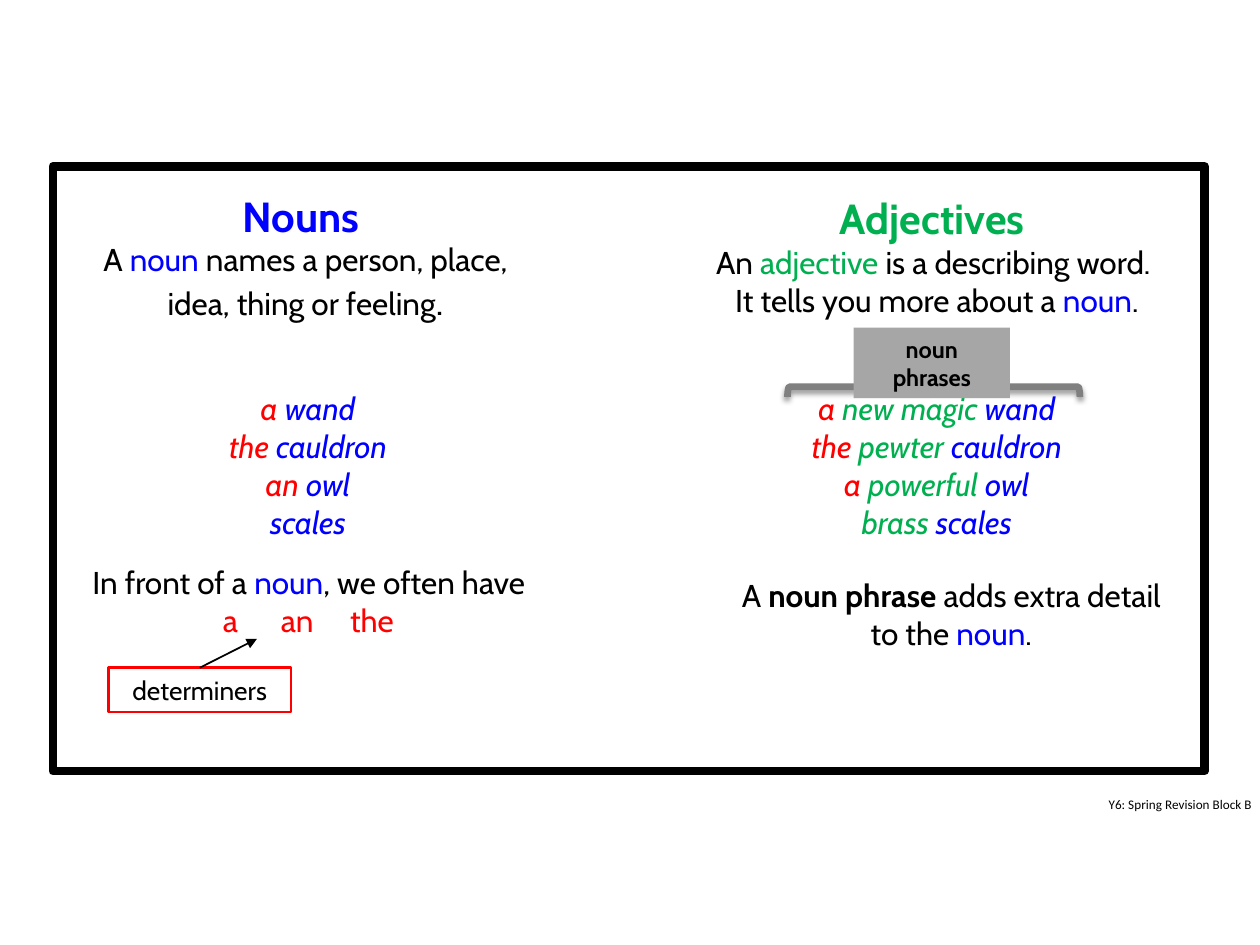
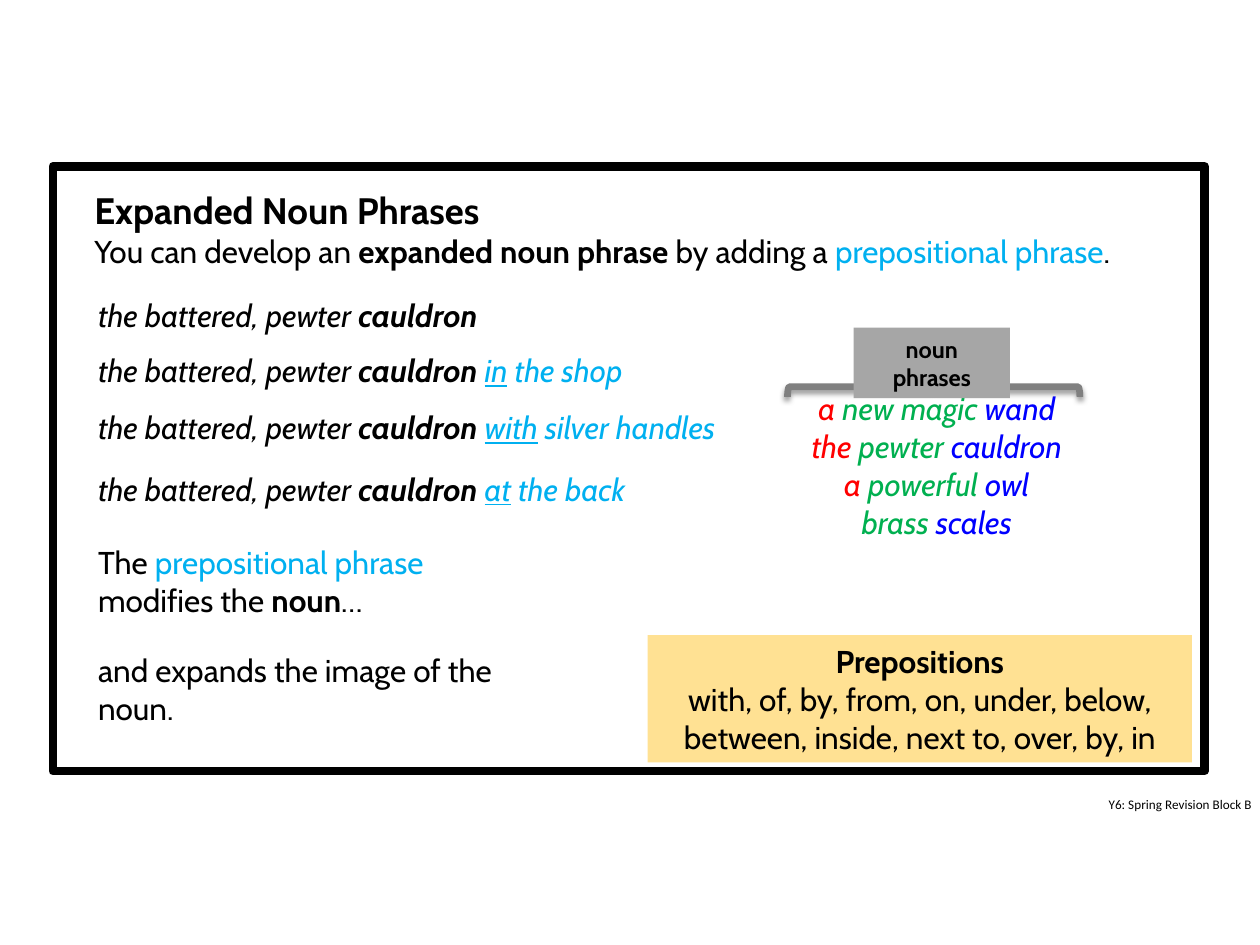
from lxml.etree import SubElement
from pptx import Presentation
from pptx.dml.color import RGBColor
from pptx.enum.shapes import MSO_CONNECTOR, MSO_SHAPE
from pptx.enum.text import MSO_ANCHOR, PP_ALIGN
from pptx.oxml.ns import qn
from pptx.util import Inches, Pt

COLOURS = {
    "black": "000000", "noun": "0000FF", "adjective": "00B050",
    "determiner": "FF0000", "preposition": "00B0F0", "white": "FFFFFF",
    "brace": "808080", "label": "A6A6A6", "panel": "FFE193",
}
CENTER, LEFT = PP_ALIGN.CENTER, PP_ALIGN.LEFT

deck = Presentation()
deck.slide_width, deck.slide_height = Inches(10), Inches(7.5)
# The grid has 100 columns and 75 rows
COLUMN = deck.slide_width / 100
ROW = deck.slide_height / 75


def add_box(page, place, fill=None, line=None, line_width=0, kind=MSO_SHAPE.RECTANGLE):
    """Add a preset shape at (column, row, columns, rows)."""
    left, top, width, height = place
    box = page.shapes.add_shape(kind, int(left * COLUMN), int(top * ROW),
                                int(width * COLUMN), int(height * ROW))
    box.shadow.inherit = False
    if fill:
        box.fill.solid()
        box.fill.fore_color.rgb = RGBColor.from_string(COLOURS[fill])
    else:
        box.fill.background()
    if line:
        box.line.color.rgb = RGBColor.from_string(COLOURS[line])
        box.line.width = Pt(line_width)
    else:
        box.line.fill.background()
    return box


def add_text(page, place, paragraphs, align=CENTER, box=None, wrap=True, font="Cabin"):
    """Write paragraphs of (size, spans); a span is (text, colour, flags b, i, u)."""
    if box is None:
        left, top, width, height = place
        box = page.shapes.add_textbox(int(left * COLUMN), int(top * ROW),
                                      int(width * COLUMN), int(height * ROW))
    else:
        box.text_frame.vertical_anchor = MSO_ANCHOR.MIDDLE
    frame = box.text_frame
    frame.word_wrap = wrap
    for index, (size, spans) in enumerate(paragraphs):
        para = frame.add_paragraph() if index else frame.paragraphs[0]
        para.alignment = align
        for text, colour, flags in spans:
            span = para.add_run()
            span.text = text
            span.font.name, span.font.size = font, Pt(size)
            span.font.color.rgb = RGBColor.from_string(COLOURS[colour])
            span.font.bold, span.font.italic = "b" in flags, "i" in flags
            span.font.underline = "u" in flags
    return box


# Frame, footer and noun phrase examples on both pages
example_phrases = [
    ("a ", "new magic ", "wand"),
    ("the ", "pewter ", "cauldron"),
    ("a ", "powerful ", "owl"),
    ("", "brass ", "scales"),
]
word_classes = ("determiner", "adjective", "noun")
pages = [deck.slides.add_slide(deck.slide_layouts[6]) for _ in range(2)]
for page in pages:
    add_box(page, (4.2, 13.2, 91.4, 48), line="black", line_width=5)
    add_text(page, (87, 62.7, 13.5, 2.3),
             [(7.5, [("Y6: Spring Revision Block B", "black", "")])],
             LEFT, wrap=False, font="Calibri")
    add_text(page, (59.5, 30.4, 29.7, 13.1), [
        (18, [(word, name, "i") for word, name in zip(phrase, word_classes) if word])
        for phrase in example_phrases])

    brace = add_box(page, (73.3, 19.1, 1.6, 23.2), line="brace", line_width=3.82,
                    kind=MSO_SHAPE.LEFT_BRACE)
    brace.rotation = 90
    effects = brace._element.spPr.find(qn("a:effectLst"))
    shadow = SubElement(effects, qn("a:outerShdw"), blurRad=str(Pt(3.1)),
                        dist=str(Pt(2)), dir="5400000", rotWithShape="0")
    shade = SubElement(shadow, qn("a:srgbClr"), val=COLOURS["black"])
    SubElement(shade, qn("a:alpha"), val="38000")

    label = add_box(page, (67.75, 26, 12.4, 5.6), fill="label")
    add_text(page, None, [(13.5, [("noun phrases", "black", "b")])], box=label)

# Page 1: nouns on the left, adjectives on the right
nouns_page, expanded_page = pages
nouns = add_text(nouns_page, (6.1, 14.6, 36.3, 12.6), [
    (24, [("Nouns ", "noun", "b")]),
    (18, [("A ", "black", ""), ("noun", "noun", ""),
          (" names a person, place, idea, thing or feeling", "black", ""),
          (".", "black", "")]),
])
nouns.text_frame.paragraphs[1].runs[-1].font.size = Pt(21)

noun_examples = [("a ", "wand"), ("the ", "cauldron"), ("an ", "owl"), ("", "scales")]
add_text(nouns_page, (9.6, 30.4, 29.7, 13.1), [
    (18, [(word, name, "i") for word, name in zip(pair, ("determiner", "noun")) if word])
    for pair in noun_examples])

in_front = add_text(nouns_page, (6.1, 44.2, 36.8, 7.1), [
    (18, [("In front of a ", "black", ""), ("noun", "noun", ""),
          (", we often have ", "black", "")]),
    (18, [("\ta\tan\tthe", "determiner", "")]),
])
determiner_row = in_front.text_frame.paragraphs[1]
determiner_row.alignment = LEFT
tabs = SubElement(determiner_row._p.get_or_add_pPr(), qn("a:tabLst"))
for stop in (10.6, 15.2, 20.7):
    SubElement(tabs, qn("a:tab"), pos=str(int(stop * COLUMN)), algn="l")

add_text(nouns_page, (55.6, 14.8, 37.5, 12.1), [
    (24, [("Adjectives ", "adjective", "b")]),
    (18, [("An ", "black", ""), ("adjective", "adjective", ""),
          (" is a describing word. ", "black", "")]),
    (18, [("It tells you more about a ", "black", ""), ("noun", "noun", ""),
          (".", "black", "")]),
])
add_text(nouns_page, (57.5, 45.2, 36, 7.1), [
    (18, [("A ", "black", ""), ("noun phrase ", "black", "b"),
          ("adds extra detail to the ", "black", ""), ("noun", "noun", ""),
          (".", "black", "")]),
])

# Determiners label and its arrow
determiners = add_box(nouns_page, (8.6, 53, 14.5, 3.5), "white", "determiner", 1.5)
add_text(nouns_page, None, [(15, [("determiners", "black", "")])], box=determiners)
arrow = nouns_page.shapes.add_connector(
    MSO_CONNECTOR.STRAIGHT, int(15.9 * COLUMN), int(53 * ROW),
    int(20.4 * COLUMN), int(50.7 * ROW))
arrow.begin_connect(determiners, 0)
arrow.line.color.rgb = RGBColor.from_string(COLOURS["black"])
arrow.line.width = Pt(1)
SubElement(arrow.line._get_or_add_ln(), qn("a:tailEnd"), type="triangle")
SubElement(arrow._element.spPr, qn("a:effectLst"))

# Page 2: expanded noun phrases
add_text(expanded_page, (6.5, 14.4, 87, 8.6), [
    (21, [("Expanded Noun Phrases", "black", "b")]),
    (18, [("You can develop an ", "black", ""), ("expanded noun phrase ", "black", "b"),
          ("by adding a ", "black", ""), ("prepositional phrase", "preposition", ""),
          (".", "black", "")]),
], LEFT)

expansions = [(23, "", ""), (27.4, "in", " the shop"),
              (31.9, "with", " silver handles"), (36.8, "at", " the back")]
for top, preposition, ending in expansions:
    spans = [("the battered, pewter ", "black", "i"),
             ("cauldron " if preposition else "cauldron", "black", "bi")]
    if preposition:
        spans += [(preposition, "preposition", "iu"), (ending, "preposition", "i")]
    add_text(expanded_page, (6.8, top, 52.7, 4), [(18, spans)], LEFT)

add_text(expanded_page, (6.8, 42.6, 31.6, 7.1), [
    (18, [("The ", "black", ""), ("prepositional phrase ", "preposition", ""),
          ("modifies the ", "black", ""), ("noun", "black", "b"), ("…", "black", "")]),
], LEFT)
add_text(expanded_page, (6.8, 51.2, 39.5, 7.1),
         [(18, [("and expands the image of the noun.", "black", "")])], LEFT)

# Prepositions panel
panel = add_box(expanded_page, (51.4, 50.4, 43.2, 10.1), fill="panel")
add_text(expanded_page, None, [
    (18, [("Prepositions", "black", "b")]),
    (18, [("with, of, by, from, on, under, below, between, inside, "
           "next to, over, by, in", "black", "")]),
], box=panel)

deck.save("out.pptx")
